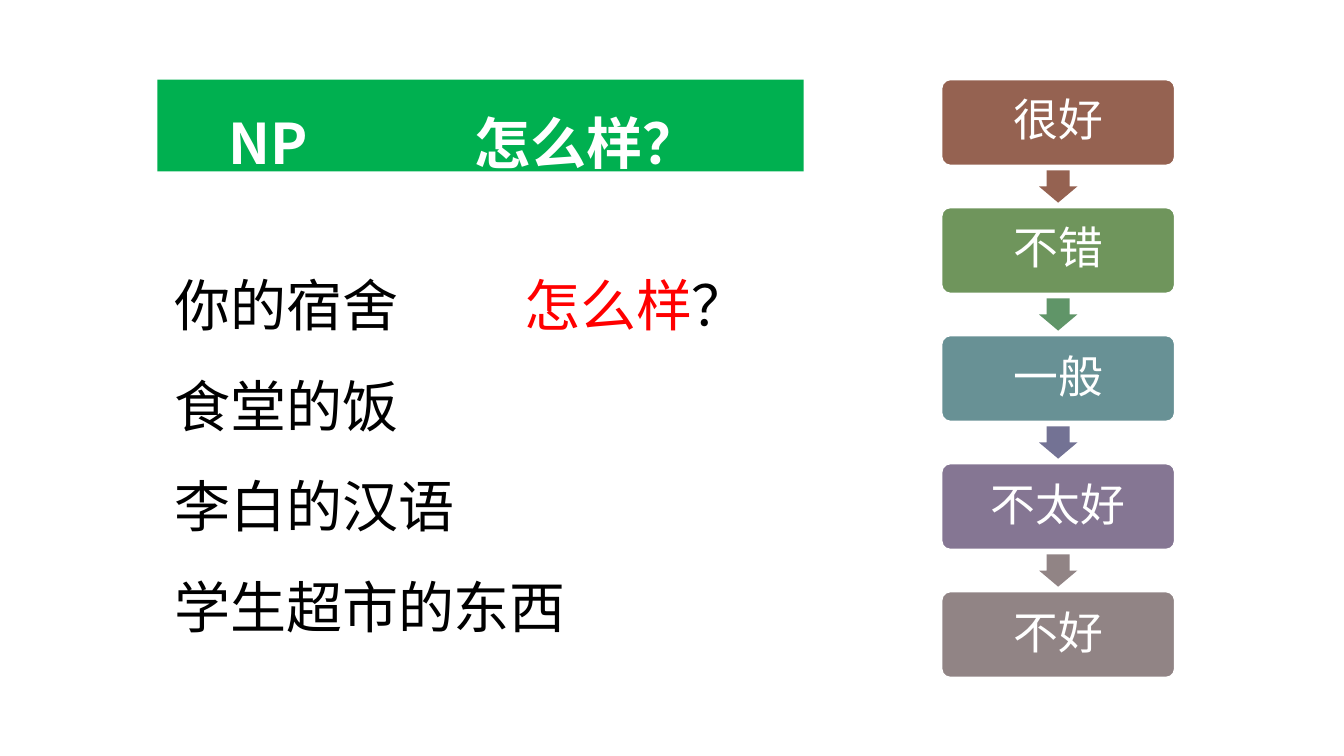
from dataclasses import dataclass

from lxml.etree import SubElement
from pptx import Presentation
from pptx.dml.color import RGBColor
from pptx.enum.shapes import MSO_SHAPE as Shape
from pptx.enum.text import MSO_ANCHOR as Anchor, PP_ALIGN as Align
from pptx.oxml.ns import qn
from pptx.util import Inches, Pt


@dataclass(frozen=True)
class Theme:
    sans: str = "Noto Sans CJK SC"
    serif: str = "Times New Roman"
    white: str = "FFFFFF"
    black: str = "000000"
    red: str = "FF0000"
    green: str = "00B050"
    large: int = 40
    label: int = 32


theme = Theme()

# Content: each line is a list of (text, colour) runs
PATTERN = [("\tNP\t怎么样？", theme.white)]
PHRASES = [
    [("你的宿舍\t", theme.black), ("怎么样", theme.red), ("？", theme.black)],
    [("食堂的饭", theme.black)],
    [("李白的汉语", theme.black)],
    [("学生超市的东西", theme.black)],
]
RATINGS = [("很好", "956251"), ("不错", "6F955C"), ("一般", "689195"),
           ("不太好", "857693"), ("不好", "918485")]
ARROW_COLOURS = ["956251", "609568", "737294", "918485"]

# Layout in inches
BANNER = (1.56, 0.79, 6.41, 0.91)
BANNER_TABS = (0.61, 3.05)
PHRASE_BOX = (1.63, 2.3, 7.13, 4.01)
PHRASE_TABS = (3.47,)
CARD_LEFT, CARD_TOP, CARD_WIDTH, CARD_HEIGHT = 9.34, 0.79, 2.31, 0.85
CARD_PITCH = 1.27
ARROW_WIDTH, ARROW_HEIGHT = 0.38, 0.32


def add_block(slide, kind, box, colour):
    shape = slide.shapes.add_shape(kind, *map(Inches, box))
    shape.shadow.inherit = False
    shape.fill.solid()
    shape.fill.fore_color.rgb = RGBColor.from_string(colour)
    shape.line.fill.background()
    return shape


def write_line(paragraph, runs, size, latin, spacing, tabs=(), bold=False):
    if tabs:
        tab_list = SubElement(paragraph._p.get_or_add_pPr(), qn("a:tabLst"))
        for position in tabs:
            SubElement(tab_list, qn("a:tab"), pos=str(Inches(position)), algn="l")
    paragraph.line_spacing = spacing
    for text, colour in runs:
        run = paragraph.add_run()
        run.text = text
        run.font.size = Pt(size)
        run.font.bold = bold
        run.font.color.rgb = RGBColor.from_string(colour)
        run.font.name = latin
        properties = run._r.get_or_add_rPr()
        properties.set("lang", "zh-CN")
        SubElement(properties, qn("a:ea"), typeface=theme.sans)


def add_phrases(slide):
    frame = slide.shapes.add_textbox(*map(Inches, PHRASE_BOX)).text_frame
    frame.word_wrap = True
    for index, runs in enumerate(PHRASES):
        paragraph = frame.add_paragraph() if index else frame.paragraphs[0]
        tabs = PHRASE_TABS if len(runs) > 1 else ()
        write_line(paragraph, runs, theme.large, theme.serif, 1.5, tabs)


def add_banner(slide):
    frame = add_block(slide, Shape.RECTANGLE, BANNER, theme.green).text_frame
    frame.vertical_anchor = Anchor.MIDDLE
    paragraph = frame.paragraphs[0]
    paragraph.alignment = Align.LEFT
    write_line(paragraph, PATTERN, theme.large, theme.sans, 1.5, BANNER_TABS, True)


def add_card(slide, top, text, colour):
    card = add_block(slide, Shape.ROUNDED_RECTANGLE,
                     (CARD_LEFT, top, CARD_WIDTH, CARD_HEIGHT), colour)
    card.adjustments[0] = 0.1
    card.line.color.rgb = RGBColor.from_string(theme.white)
    card.line.width = Pt(1)
    frame = card.text_frame
    frame.vertical_anchor = Anchor.MIDDLE
    frame.margin_top = frame.margin_bottom = Inches(0.13)
    paragraph = frame.paragraphs[0]
    paragraph.alignment = Align.CENTER
    write_line(paragraph, [(text, theme.white)], theme.label, theme.sans, 0.9)


def add_arrow(slide, card_top, colour):
    gap = CARD_PITCH - CARD_HEIGHT
    left = CARD_LEFT + (CARD_WIDTH - ARROW_WIDTH) / 2
    top = card_top + CARD_HEIGHT + (gap - ARROW_HEIGHT) / 2
    arrow = add_block(slide, Shape.DOWN_ARROW,
                      (left, top, ARROW_WIDTH, ARROW_HEIGHT), colour)
    arrow.adjustments[0] = 0.6
    arrow.adjustments[1] = 0.5


def main():
    presentation = Presentation()
    presentation.slide_width = Inches(13.33)
    presentation.slide_height = Inches(7.5)
    slide = presentation.slides.add_slide(presentation.slide_layouts[6])

    # Sentence pattern and examples
    add_phrases(slide)
    add_banner(slide)

    # Rating scale, best to worst
    for index, (text, colour) in enumerate(RATINGS):
        top = CARD_TOP + index * CARD_PITCH
        add_card(slide, top, text, colour)
        if index < len(ARROW_COLOURS):
            add_arrow(slide, top, ARROW_COLOURS[index])

    presentation.save("out.pptx")


if __name__ == "__main__":
    main()
